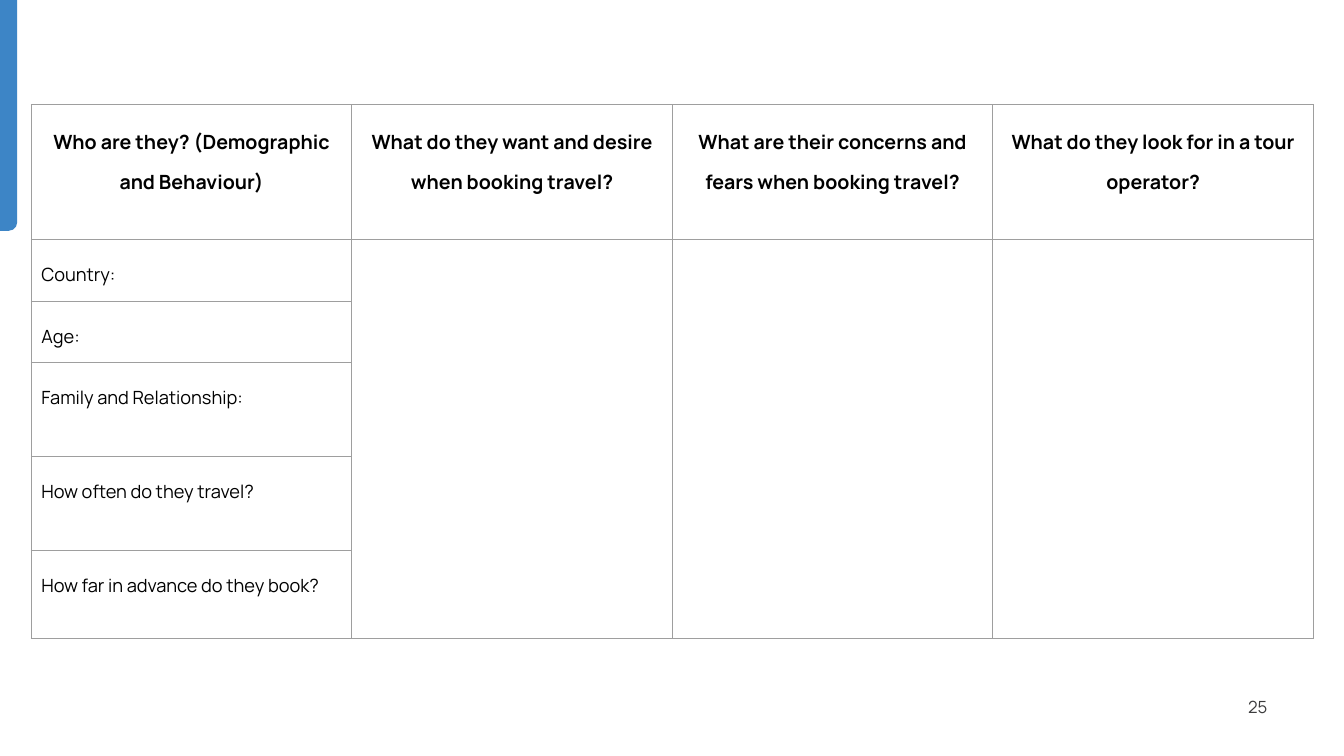
from dataclasses import dataclass

from lxml.etree import SubElement
from pptx import Presentation
from pptx.dml.color import RGBColor
from pptx.enum.shapes import MSO_SHAPE as Shape
from pptx.enum.text import MSO_ANCHOR as Anchor, PP_ALIGN as Align
from pptx.oxml.ns import qn
from pptx.util import Inches, Pt


@dataclass(frozen=True)
class Theme:
    font: str = "Manrope"
    accent: str = "3D85C6"
    ink: str = "000000"
    muted: str = "3B3B3C"
    rule: str = "9E9E9E"
    rule_width: float = 0.75
    heading_size: int = 14
    prompt_size: int = 13
    number_size: int = 12


def write(frame, text, *, size, color, font, bold=False, align=Align.LEFT, spacing=1.0):
    paragraph = frame.paragraphs[0]
    paragraph.alignment = align
    paragraph.line_spacing = spacing
    run = paragraph.add_run()
    run.text = text
    run.font.name = font
    run.font.size = Pt(size)
    run.font.bold = bold
    run.font.color.rgb = RGBColor.from_string(color)


class SlideBuilder:
    def __init__(self, deck, theme):
        self.theme = theme
        self.column = deck.slide_width / 100
        self.row = deck.slide_height / 100
        self.slide = deck.slides.add_slide(deck.slide_layouts[6])

    def box(self, left, top, width, height):
        return (round(left * self.column), round(top * self.row),
                round(width * self.column), round(height * self.row))

    def side_tab(self, *place):
        tab = self.slide.shapes.add_shape(Shape.ROUND_1_RECTANGLE, *self.box(*place))
        tab.adjustments[0] = 0.5
        tab.rotation = 180
        tab._element.spPr.find(qn("a:xfrm")).set("flipH", "1")
        tab.shadow.inherit = False
        tab.fill.solid()
        tab.fill.fore_color.rgb = RGBColor.from_string(self.theme.accent)
        tab.line.fill.background()

    def page_number(self, number, *place):
        frame = self.slide.shapes.add_textbox(*self.box(*place)).text_frame
        frame.word_wrap = True
        frame.vertical_anchor = Anchor.MIDDLE
        frame.margin_left = frame.margin_right = 0
        write(frame, number, size=self.theme.number_size, color=self.theme.muted,
              font=self.theme.font, align=Align.RIGHT)

    def style_cell(self, cell):
        cell.margin_left = cell.margin_right = Inches(0.1)
        cell.margin_top = cell.margin_bottom = Inches(0.1)
        properties = cell._tc.get_or_add_tcPr()
        for side in ("a:lnL", "a:lnR", "a:lnT", "a:lnB"):
            edge = SubElement(properties, qn(side), w=str(Pt(self.theme.rule_width)))
            fill = SubElement(edge, qn("a:solidFill"))
            SubElement(fill, qn("a:srgbClr"), val=self.theme.rule)
        cell.fill.background()

    def persona_table(self, headings, prompts, left, top, column_width, row_heights):
        place = self.box(left, top, column_width * len(headings), sum(row_heights))
        grid = self.slide.shapes.add_table(len(row_heights), len(headings), *place).table
        grid.first_row = grid.horz_banding = False
        for column in grid.columns:
            column.width = round(column_width * self.column)
        for row, height in zip(grid.rows, row_heights):
            row.height = round(height * self.row)
        for cell in grid.iter_cells():
            self.style_cell(cell)

        look = dict(color=self.theme.ink, font=self.theme.font, spacing=1.5)
        for index, heading in enumerate(headings):
            write(grid.cell(0, index).text_frame, heading, bold=True,
                  size=self.theme.heading_size, align=Align.CENTER, **look)
        for index, prompt in enumerate(prompts, start=1):
            write(grid.cell(index, 0).text_frame, prompt,
                  size=self.theme.prompt_size, **look)
        for index in range(1, len(headings)):
            grid.cell(1, index).merge(grid.cell(len(prompts), index))


HEADINGS = (
    "Who are they? (Demographic and Behaviour)",
    "What do they want and desire when booking travel?",
    "What are their concerns and fears when booking travel?",
    "What do they look for in a tour operator?",
)
PROMPTS = (
    "Country:",
    "Age:",
    "Family and Relationship:",
    "How often do they travel?",
    "How far in advance do they book?",
)
ROW_HEIGHTS = (17.87, 8.13, 8.13, 12.4, 12.4, 11.73)


def main():
    deck = Presentation()
    deck.slide_width, deck.slide_height = Inches(13.33), Inches(7.5)
    persona = SlideBuilder(deck, Theme())
    persona.side_tab(0, 0, 1.28, 30.53)
    persona.page_number("25", 90.62, 90.8, 3.68, 5.33)
    persona.persona_table(HEADINGS, PROMPTS, 2.33, 13.87, 23.85, ROW_HEIGHTS)
    deck.save("out.pptx")


if __name__ == "__main__":
    main()
